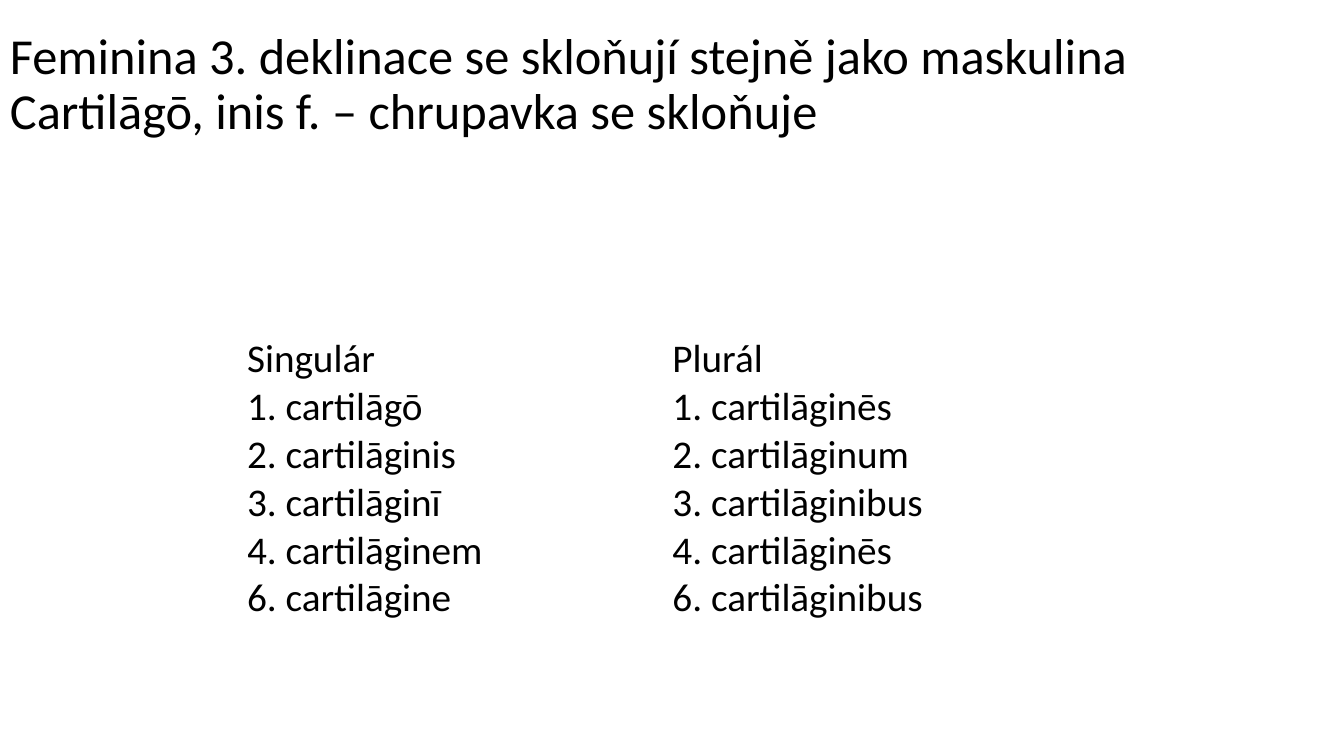
from pptx import Presentation
from pptx import util as u
from pptx.dml.color import RGBColor
from pptx.enum import text

TITLE = [
    "Feminina 3. deklinace se skloňují stejně jako maskulina",
    "Cartilāgō, inis f. – chrupavka se skloňuje",
]
FORMS = {
    "Singulár": ["1. cartilāgō", "2. cartilāginis", "3. cartilāginī",
                 "4. cartilāginem", "6. cartilāgine"],
    "Plurál": ["1. cartilāginēs", "2. cartilāginum", "3. cartilāginibus",
               "4. cartilāginēs", "6. cartilāginibus"],
}
COLORS = {"ink": "000000", "page": "FFFFFF"}
SIZES = {"title": 36, "table": 28}
ROWS = [0.47, 2.8]
COL = 4.22


def format(item, values):
    for name, value in values.items():
        setattr(item, name, value)


def write(frame, lines, size, space):
    frame.text = "\n".join(lines)
    for para in frame.paragraphs:
        para.line_spacing = space
        format(para.font, {"name": "Calibri", "size": u.Pt(size), "bold": False})
        para.font.color.rgb = RGBColor.from_string(COLORS["ink"])


def main():
    deck = Presentation()
    format(deck, {"slide_width": u.Inches(13.33), "slide_height": u.Inches(7.5)})
    slide = deck.slides.add_slide(deck.slide_layouts[6])
    slide.background.fill.solid()
    slide.background.fill.fore_color.rgb = RGBColor.from_string(COLORS["page"])

    title = slide.shapes.add_textbox(*map(u.Inches, (0, 0.4, 12.98, 1.45))).text_frame
    format(title, {"word_wrap": True, "vertical_anchor": text.MSO_ANCHOR.MIDDLE,
                   "margin_top": 0, "margin_bottom": u.Inches(0.55)})
    write(title, TITLE, SIZES["title"], 0.9)

    place = (2.45, 3.33, COL * len(FORMS), sum(ROWS))
    table = slide.shapes.add_table(len(ROWS), len(FORMS), *map(u.Inches, place)).table
    format(table, {"first_row": False, "horz_banding": False})
    for row, height in zip(table.rows, ROWS):
        row.height = u.Inches(height)
    for col, (head, forms) in enumerate(FORMS.items()):
        table.columns[col].width = u.Inches(COL)
        for row, lines in enumerate([[head], forms]):
            cell = table.cell(row, col)
            cell.fill.background()
            format(cell, {"margin_" + side: 0 for side in ("left", "right", "top", "bottom")})
            write(cell.text_frame, lines, SIZES["table"], 1.0)

    deck.save("out.pptx")


if __name__ == "__main__":
    main()
